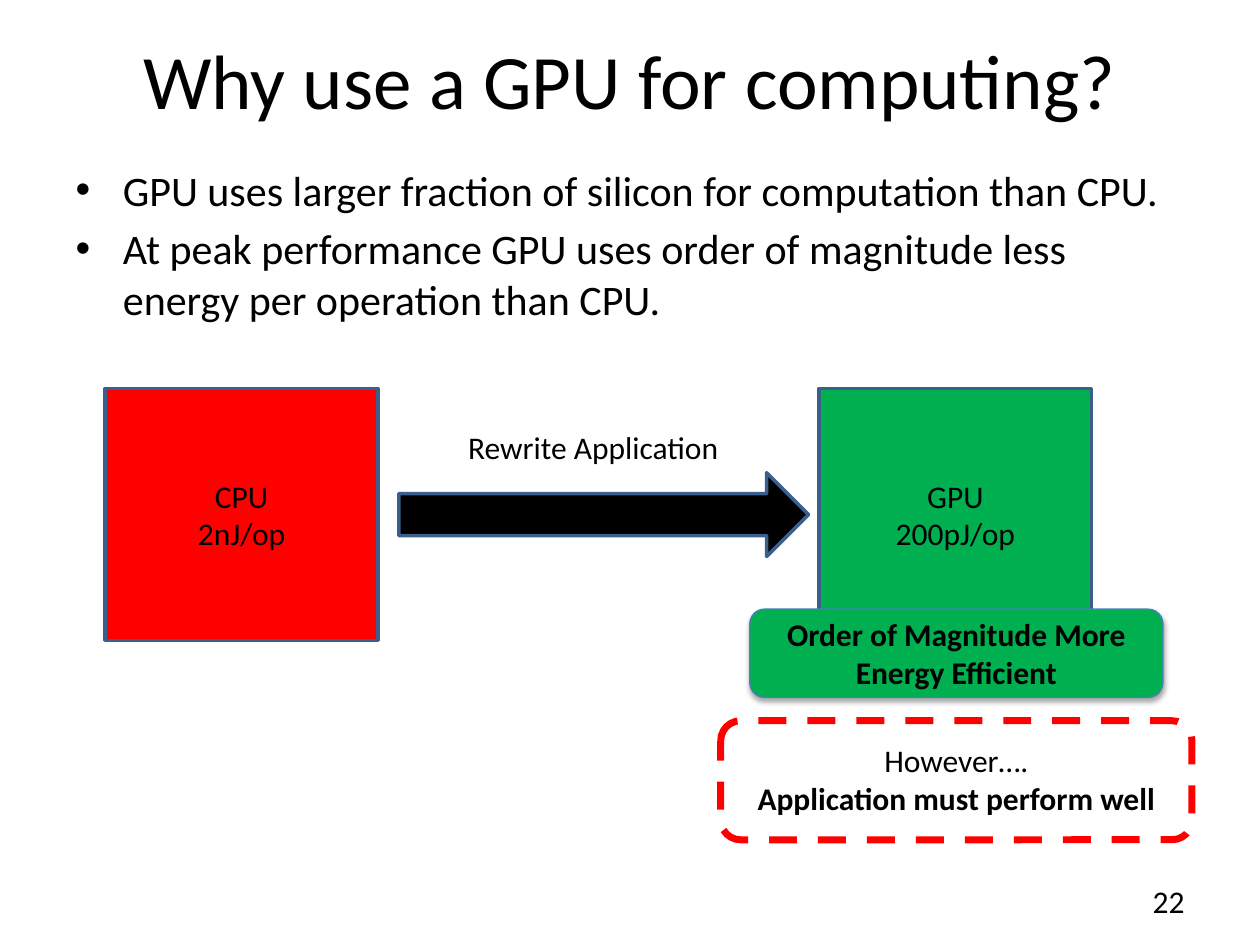
from lxml import etree
from pptx import Presentation
from pptx.dml.color import RGBColor
from pptx.enum.dml import MSO_LINE
from pptx.enum.shapes import MSO_SHAPE
from pptx.enum.text import MSO_ANCHOR, PP_ALIGN
from pptx.oxml.ns import qn
from pptx.util import Cm, Pt

RECT = MSO_SHAPE.RECTANGLE
ROUNDED = MSO_SHAPE.ROUNDED_RECTANGLE
ARROW = MSO_SHAPE.RIGHT_ARROW
DASH = MSO_LINE.DASH
CENTER, RIGHT = PP_ALIGN.CENTER, PP_ALIGN.RIGHT
TOP, MIDDLE = MSO_ANCHOR.TOP, MSO_ANCHOR.MIDDLE

COLORS = {
    "text": "000000",
    "cpu": "FF0000",
    "gpu": "00B050",
    "arrow": "000000",
    "outline": "3A5F8C",
    "claim_outline": "4B7EBC",
    "warning": "FF0000",
    "shadow": "000000",
}
FONT = "Calibri"


def rgb(name):
    return RGBColor.from_string(COLORS[name])


def write(frame, lines, size=18, align=None, anchor=MIDDLE, bold_lines=()):
    frame.word_wrap = True
    frame.vertical_anchor = anchor
    frame.text = "\n".join(lines)
    for number, paragraph in enumerate(frame.paragraphs):
        paragraph.alignment = align
        font = paragraph.font
        font.name, font.size = FONT, Pt(size)
        font.color.rgb = rgb("text")
        font.bold = number in bold_lines


def add_block(slide, preset, box, fill, outline, width):
    block = slide.shapes.add_shape(preset, *map(Cm, box))
    block.shadow.inherit = False
    if fill:
        block.fill.solid()
        block.fill.fore_color.rgb = rgb(fill)
    else:
        block.fill.background()
    block.line.color.rgb = rgb(outline)
    block.line.width = Pt(width)
    return block


def add_label(slide, box, lines, **style):
    label = slide.shapes.add_textbox(*map(Cm, box))
    write(label.text_frame, lines, **style)


def add_soft_shadow(block):
    effects = block._element.spPr.find(qn("a:effectLst"))
    shadow = etree.SubElement(effects, qn("a:outerShdw"), blurRad=str(Pt(3.1)),
                              dist=str(Pt(1.8)), dir="5400000", rotWithShape="0")
    color = etree.SubElement(shadow, qn("a:srgbClr"), val=COLORS["shadow"])
    etree.SubElement(color, qn("a:alpha"), val="35000")


def fill_placeholder(placeholder, box, lines, **style):
    placeholder.left, placeholder.top, placeholder.width, placeholder.height = map(Cm, box)
    write(placeholder.text_frame, lines, **style)


def add_comparison(slide, left, top, width, height):
    side = 5.5
    processors = [
        ("cpu", left, ["CPU", "2nJ/op"]),
        ("gpu", left + width - side, ["GPU", "200pJ/op"]),
    ]
    for fill, x, lines in processors:
        processor = add_block(slide, RECT, (x, top, side, height), fill, "outline", 2)
        write(processor.text_frame, lines, align=CENTER)
    add_block(slide, ARROW, (left + 5.92, top + 1.7, 8.26, 1.69), "arrow", "outline", 2)
    add_label(slide, (left + 6.98, top + 0.68, 5.72, 1.02),
              ["Rewrite Application"], align=CENTER, anchor=TOP)


def add_conclusion(slide, left, top, width):
    def centered(y, w, h):
        return left + (width - w) / 2, top + y, w, h

    claim = add_block(slide, ROUNDED, centered(0, 8.33, 1.78), "gpu", "claim_outline", 0.75)
    add_soft_shadow(claim)
    write(claim.text_frame, ["Order of Magnitude More Energy Efficient"],
          align=CENTER, bold_lines=(0,))
    add_label(slide, centered(2.53, width, 1.8),
              ["However….", "Application must perform well"],
              align=CENTER, anchor=TOP, bold_lines=(1,))
    warning = add_block(slide, ROUNDED, centered(2.25, 9.5, 2.4), None, "warning", 4)
    warning.line.dash_style = DASH


def main():
    deck = Presentation()
    deck.slide_width, deck.slide_height = Cm(25.4), Cm(19.05)
    slide = deck.slides.add_slide(deck.slide_layouts[1])
    fill_placeholder(slide.shapes.title, (1.27, 0, 22.86, 3.18),
                     ["Why use a GPU for computing?"], size=44, align=CENTER)
    fill_placeholder(slide.placeholders[1], (1.27, 3.18, 22.86, 13.41), [
        "GPU uses larger fraction of silicon for computation than CPU.",
        "At peak performance GPU uses order of magnitude less energy per operation than CPU.",
    ], size=24, anchor=TOP)
    add_label(slide, (18.21, 17.65, 5.92, 1.02), ["22"], align=RIGHT)
    add_comparison(slide, 2.12, 7.83, 19.89, 5.08)
    add_conclusion(slide, 14.35, 12.28, 9.86)
    deck.save("out.pptx")


if __name__ == "__main__":
    main()
